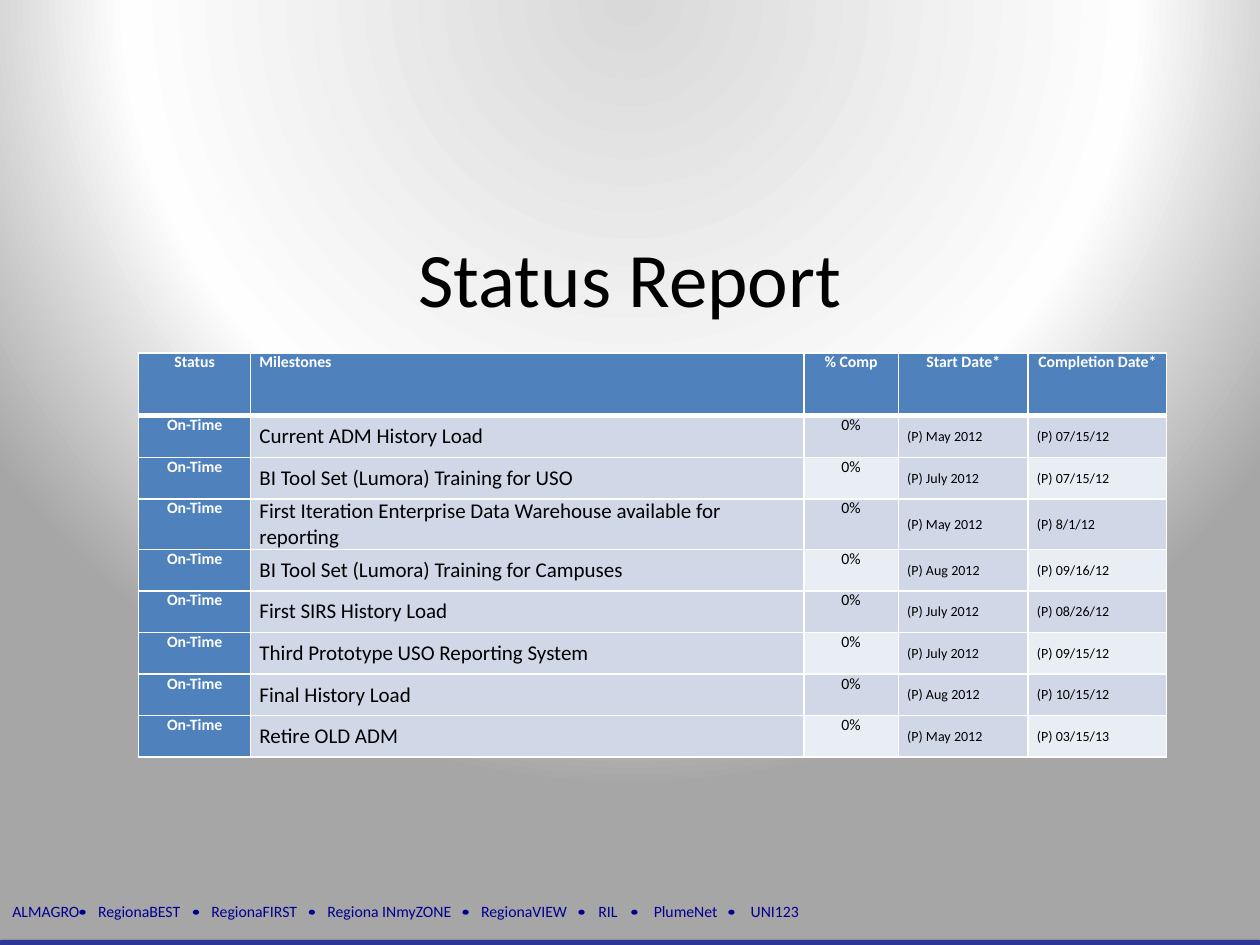
from lxml import etree
from pptx import Presentation
from pptx.dml.color import RGBColor
from pptx.enum.shapes import MSO_SHAPE
from pptx.enum.text import MSO_ANCHOR, PP_ALIGN
from pptx.oxml import parse_xml
from pptx.oxml.ns import nsdecls, qn
from pptx.util import Inches, Pt

ROUNDED, OVAL = MSO_SHAPE.ROUNDED_RECTANGLE, MSO_SHAPE.OVAL
TOP, MIDDLE = MSO_ANCHOR.TOP, MSO_ANCHOR.MIDDLE
LEFT, CENTER = PP_ALIGN.LEFT, PP_ALIGN.CENTER

FONT = "Calibri"
BLACK = RGBColor(0x00, 0x00, 0x00)
WHITE = RGBColor(0xFF, 0xFF, 0xFF)
NAVY = RGBColor(0x00, 0x00, 0x90)
INDIGO = RGBColor(0x2E, 0x36, 0x98)
BLUE = RGBColor(0x4F, 0x81, 0xBD)
BAND_DARK = RGBColor(0xD0, 0xD8, 0xE8)
BAND_LIGHT = RGBColor(0xE9, 0xED, 0xF4)

FOOTER_NAMES = ["ALMAGRO", "RegionaBEST", "RegionaFIRST", "Regiona INmyZONE",
                "RegionaVIEW", "RIL", "PlumeNet", "UNI123"]
FOOTER_TABS = [0.68, 1.58, 2.5, 3.72, 4.65, 5.09, 5.86]
FOOTER_DOTS = [0.63, 1.53, 2.45, 3.67, 4.59, 5.01, 5.78]

COLUMN_WIDTHS = [0.89, 4.39, 0.75, 1.03, 1.1]
HEADERS = ["Status", "Milestones", "% Comp", "Start Date*", "Completion Date*"]
HEADER_ALIGN = [CENTER, LEFT, CENTER, CENTER, CENTER]
MILESTONES = [
    ("Current ADM History Load", "May 2012", "07/15/12"),
    ("BI Tool Set (Lumora) Training for USO", "July 2012", "07/15/12"),
    ("First Iteration Enterprise Data Warehouse available for reporting",
     "May 2012", "8/1/12"),
    ("BI Tool Set (Lumora) Training for Campuses", "Aug 2012", "09/16/12"),
    ("First SIRS History Load", "July 2012", "08/26/12"),
    ("Third Prototype USO Reporting System", "July 2012", "09/15/12"),
    ("Final History Load", "Aug 2012", "10/15/12"),
    ("Retire OLD ADM", "May 2012", "03/15/13"),
]


def add_run(para, text, size, color, bold=False):
    span = para.add_run()
    span.text = text
    span.font.name = FONT
    span.font.size = Pt(size)
    span.font.color.rgb = color
    span.font.bold = bold


def set_background(page):
    """Radial gradient centred above the top edge."""
    page.background.fill.solid()
    properties = page.element.find(".//" + qn("p:bgPr"))
    solid = properties.find(qn("a:solidFill"))
    properties.replace(solid, parse_xml(
        f'<a:gradFill rotWithShape="1" {nsdecls("a")}><a:gsLst>'
        '<a:gs pos="0"><a:srgbClr val="D9D9D9"><a:alpha val="80000"/></a:srgbClr></a:gs>'
        '<a:gs pos="64000"><a:srgbClr val="FEFEFE"/></a:gs>'
        '<a:gs pos="100000"><a:srgbClr val="A6A6A6"/></a:gs></a:gsLst>'
        '<a:path path="circle"><a:fillToRect l="50000" t="-80000" r="50000" b="180000"/>'
        '</a:path></a:gradFill>'))


def add_filled_shape(page, kind, left, top, width, height, color):
    shape = page.shapes.add_shape(kind, Inches(left), Inches(top),
                                  Inches(width), Inches(height))
    shape.shadow.inherit = False
    shape.fill.solid()
    shape.fill.fore_color.rgb = color
    shape.line.fill.background()
    return shape


def add_bottom_bar(page):
    bar = add_filled_shape(page, ROUNDED, 0, 7.46, 10, 0.05, INDIGO)
    effects = bar.element.spPr.find(qn("a:effectLst"))
    effects.append(parse_xml(
        f'<a:outerShdw {nsdecls("a")} blurRad="{Pt(3.1)}" dist="{Pt(1.8)}" '
        'dir="5400000" rotWithShape="0"><a:srgbClr val="000000">'
        '<a:alpha val="35000"/></a:srgbClr></a:outerShdw>'))


def add_footer(page):
    box = page.shapes.add_textbox(0, Inches(7.11), Inches(7.81), Inches(0.25))
    box.text_frame.word_wrap = True
    para = box.text_frame.paragraphs[0]
    tabs = etree.SubElement(para._p.get_or_add_pPr(), qn("a:tabLst"))
    for position in FOOTER_TABS:
        etree.SubElement(tabs, qn("a:tab"), pos=str(Inches(position)), algn="l")
    add_run(para, "\t".join(FOOTER_NAMES), 9, NAVY)
    for left in FOOTER_DOTS:
        add_filled_shape(page, OVAL, left, 7.22, 0.05, 0.04, NAVY)


def set_borders(cell, top=1, bottom=1):
    properties = cell._tc.get_or_add_tcPr()
    widths = [("L", 1), ("R", 1), ("T", top), ("B", bottom)]
    for index, (side, width) in enumerate(widths):
        properties.insert(index, parse_xml(
            f'<a:ln{side} {nsdecls("a")} w="{Pt(width)}"><a:solidFill>'
            f'<a:srgbClr val="{WHITE}"/></a:solidFill></a:ln{side}>'))


def fill_cell(cell, text, size, color, fill, align=LEFT, anchor=TOP, bold=False):
    cell.margin_left = cell.margin_right = Inches(0.07)
    cell.margin_top = cell.margin_bottom = 0
    cell.vertical_anchor = anchor
    cell.fill.solid()
    cell.fill.fore_color.rgb = fill
    para = cell.text_frame.paragraphs[0]
    para.alignment = align
    add_run(para, text, size, color, bold)


def add_milestone_table(page):
    table = page.shapes.add_table(len(MILESTONES) + 1, len(HEADERS), Inches(1.1),
                                  Inches(2.8), Inches(8.15), Inches(3.23)).table
    for column, width in zip(table.columns, COLUMN_WIDTHS):
        column.width = Inches(width)
    for index, row in enumerate(table.rows):
        row.height = Inches(0.33 if index else 0.5)

    for column, (text, align) in enumerate(zip(HEADERS, HEADER_ALIGN)):
        cell = table.cell(0, column)
        fill_cell(cell, text, 9, WHITE, BLUE, align, bold=True)
        cell.text_frame.paragraphs[0].space_after = Pt(3)
        set_borders(cell, bottom=3)

    for row, (milestone, start, completion) in enumerate(MILESTONES, 1):
        cells = table.rows[row].cells
        band = BAND_DARK if row % 2 else BAND_LIGHT
        fill_cell(cells[0], "On-Time", 9, WHITE, BLUE, CENTER, bold=True)
        fill_cell(cells[1], milestone, 12, BLACK, BAND_DARK, anchor=MIDDLE)
        fill_cell(cells[2], "0%", 9, BLACK, band, CENTER)
        fill_cell(cells[3], f"(P) {start}", 8, BLACK, BAND_DARK, anchor=MIDDLE)
        fill_cell(cells[4], f"(P) {completion}", 8, BLACK, band, anchor=MIDDLE)
        for cell in cells:
            set_borders(cell, top=3 if row == 1 else 1)


def place_title(page):
    """Fill the title and bring it in front of the table."""
    title = page.shapes.title
    title.left, title.top = Inches(0.75), Inches(1.78)
    title.width, title.height = Inches(8.5), Inches(1.61)
    title.text_frame.vertical_anchor = TOP
    para = title.text_frame.paragraphs[0]
    para.alignment = CENTER
    add_run(para, "Status Report", 44, BLACK)
    title.element.getparent().append(title.element)


def main():
    deck = Presentation()
    deck.slide_width, deck.slide_height = Inches(10), Inches(7.5)
    page = deck.slides.add_slide(deck.slide_layouts[0])
    subtitle = page.placeholders[1].element
    subtitle.getparent().remove(subtitle)
    set_background(page)
    add_bottom_bar(page)
    add_footer(page)
    add_milestone_table(page)
    place_title(page)
    deck.save("out.pptx")


if __name__ == "__main__":
    main()
